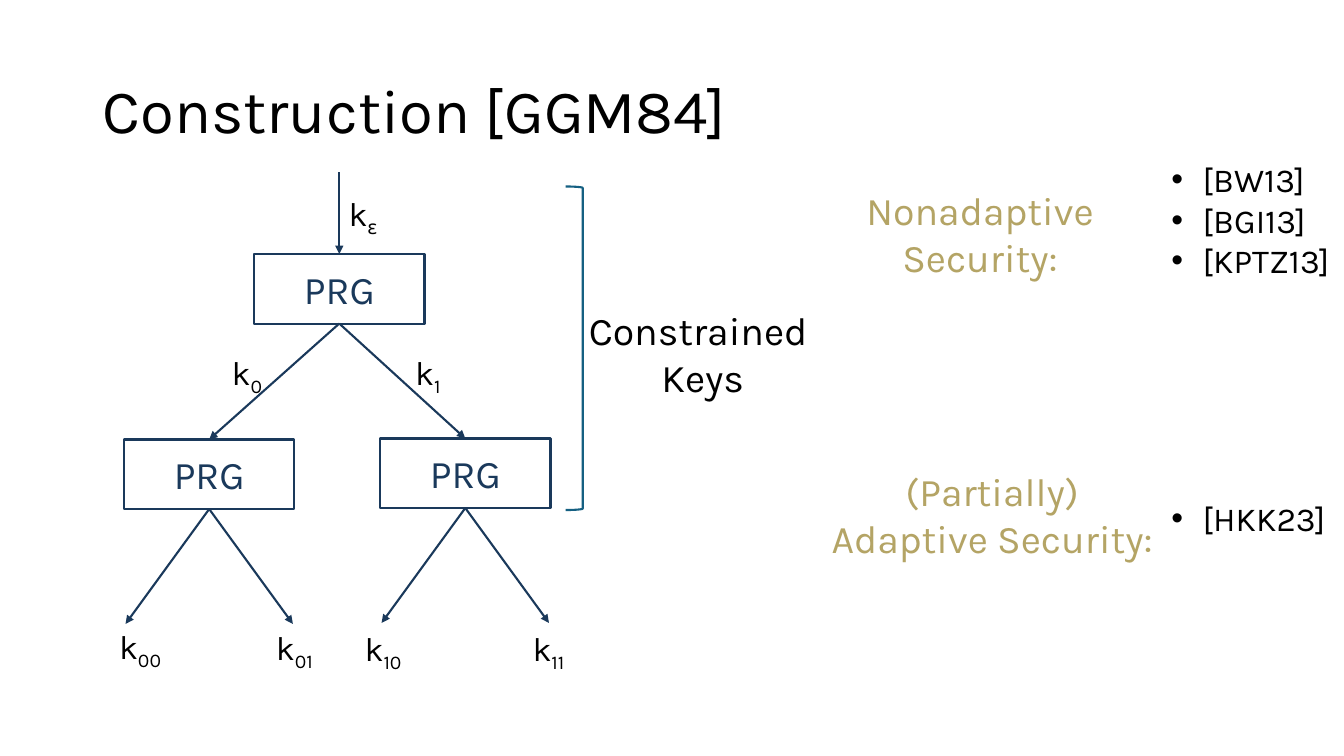
from dataclasses import dataclass
from typing import Optional

from lxml import etree
from pptx import Presentation
from pptx.dml.color import RGBColor
from pptx.enum import shapes, text
from pptx.oxml import ns
from pptx.util import Inches, Pt

BLACK = RGBColor(0x00, 0x00, 0x00)
NAVY = RGBColor(0x1A, 0x39, 0x5B)
TEAL = RGBColor(0x15, 0x60, 0x82)
GOLD = RGBColor(0xB4, 0xA4, 0x65)
FONT = "Karla"
CELL = 0.1  # inches per grid column and row
LEFT, CENTER = text.PP_ALIGN.LEFT, text.PP_ALIGN.CENTER


@dataclass(frozen=True)
class Label:
    """Text lines in a box; an underscore starts a subscript."""
    lines: tuple[str, ...]
    column: float
    row: float
    columns: float
    rows: float
    size: int = 24
    color: RGBColor = BLACK
    align: text.PP_ALIGN = CENTER
    anchor: text.MSO_ANCHOR = text.MSO_ANCHOR.TOP
    bullet: bool = False
    spacing: Optional[float] = None


@dataclass(frozen=True)
class Node:
    column: float
    row: float
    parent: Optional[int] = None
    columns: float = 16.9
    rows: float = 6.9

    @property
    def middle(self) -> float:
        return self.column + self.columns / 2

    @property
    def bottom(self) -> float:
        return self.row + self.rows


def grid(cells: float) -> int:
    return Inches(cells * CELL)


def key(name: str, column: float, row: float, align: text.PP_ALIGN = LEFT) -> Label:
    return Label((f"k_{name}",), column, row, 10.6, 5, align=align)


# Tree of generators; each parent is an index into this tuple
NODES = (Node(25.2, 25.2), Node(12.3, 43.6, 0), Node(37.7, 43.5, 0))
LEAF_REACH, LEAF_DROP = 8.3, 11.4

KEYS = (
    key("ε", 33.6, 18.6), key("0", 22, 34.4), key("1", 40.2, 34.4),
    key("00", 8.6, 61.6, CENTER), key("01", 23.9, 61.7, CENTER),
    key("10", 32.7, 61.8, CENTER), key("11", 49.1, 61.8, CENTER),
)

LABELS = (
    Label(("Construction [GGM84]",), 9.2, 4, 115, 14.5, 44, align=LEFT,
          anchor=text.MSO_ANCHOR.MIDDLE, spacing=0.9),
    Label(("Constrained ", "Keys"), 53.8, 29.9, 31.8, 10.4, 28),
    Label(("Nonadaptive Security:",), 77.8, 18, 38.8, 10.4, 28, GOLD),
    Label(("[BW13]", "[BGI13]", "[KPTZ13]"), 115.2, 15.3, 23, 13.1,
          align=LEFT, bullet=True),
    Label(("(Partially)", "Adaptive Security:"), 80.2, 45.9, 36.4, 10.4, 28, GOLD),
    Label(("[HKK23]",), 115.2, 48.9, 23, 5, align=LEFT, bullet=True),
)


def add_span(para, words: str, size: int, color: RGBColor, subscript: bool = False) -> None:
    span = para.add_run()
    span.text = words
    for name, value in {"name": FONT, "size": Pt(size)}.items():
        setattr(span.font, name, value)
    span.font.color.rgb = color
    if subscript:
        span._r.get_or_add_rPr().set("baseline", "-25000")


def add_bullet(para) -> None:
    properties = para._p.get_or_add_pPr()
    properties.set("marL", str(Inches(0.31)))
    properties.set("indent", str(Inches(-0.31)))
    etree.SubElement(properties, ns.qn("a:buFont")).set("typeface", "Arial")
    etree.SubElement(properties, ns.qn("a:buChar")).set("char", "•")


def add_label(page, label: Label) -> None:
    box = page.shapes.add_textbox(*map(grid, (label.column, label.row,
                                              label.columns, label.rows)))
    frame = box.text_frame
    for name, value in {"word_wrap": True, "vertical_anchor": label.anchor}.items():
        setattr(frame, name, value)
    for index, line in enumerate(label.lines):
        para = frame.add_paragraph() if index else frame.paragraphs[0]
        for name, value in {"alignment": label.align,
                            "line_spacing": label.spacing}.items():
            setattr(para, name, value)
        if label.bullet:
            add_bullet(para)
        base, _, subscript = line.partition("_")
        add_span(para, base, label.size, label.color)
        if subscript:
            add_span(para, subscript, label.size, label.color, True)


def add_outline(page, kind: shapes.MSO_SHAPE, column: float, row: float,
                columns: float, rows: float, color: RGBColor):
    shape = page.shapes.add_shape(kind, *map(grid, (column, row, columns, rows)))
    shape.shadow.inherit = False
    shape.fill.background()
    shape.line.color.rgb = color
    shape.line.width = Pt(1.5)
    return shape


def add_node(page, node: Node):
    box = add_outline(page, shapes.MSO_SHAPE.RECTANGLE, node.column, node.row,
                      node.columns, node.rows, NAVY)
    box.text_frame.vertical_anchor = text.MSO_ANCHOR.MIDDLE
    para = box.text_frame.paragraphs[0]
    para.alignment = CENTER
    add_span(para, "PRG", 28, NAVY)
    return box


def add_arrow(page, start: tuple[float, float], end: tuple[float, float],
              source=None, target=None) -> None:
    arrow = page.shapes.add_connector(shapes.MSO_CONNECTOR.STRAIGHT,
                                      *map(grid, start + end))
    arrow.line.color.rgb = NAVY
    arrow.line.width = Pt(1.5)
    line = arrow.line._get_or_add_ln()
    etree.SubElement(line, ns.qn("a:tailEnd")).set("type", "triangle")
    etree.SubElement(arrow._element.spPr, ns.qn("a:effectLst"))
    if source is not None:
        arrow.begin_connect(source, 2)
    if target is not None:
        arrow.end_connect(target, 0)


def main() -> None:
    deck = Presentation()
    deck.slide_width, deck.slide_height = Inches(13.33), Inches(7.5)
    page = deck.slides.add_slide(deck.slide_layouts[6])

    # Generator boxes and the arrows into them
    boxes = [add_node(page, node) for node in NODES]
    for node, box in zip(NODES, boxes):
        top = (node.middle, node.row)
        if node.parent is None:
            add_arrow(page, (node.middle, node.row - 8.1), top, target=box)
            continue
        parent = NODES[node.parent]
        add_arrow(page, (parent.middle, parent.bottom), top, boxes[node.parent], box)
        # Arrows out to the leaf keys
        for side in (-1, 1):
            add_arrow(page, (node.middle, node.bottom),
                      (node.middle + side * LEAF_REACH, node.bottom + LEAF_DROP), box)

    # Bracket around the constrained keys
    add_outline(page, shapes.MSO_SHAPE.RIGHT_BRACKET, 56.1, 18.5, 1.7, 32.1, TEAL)

    # Title, key names and security notes
    for label in LABELS + KEYS:
        add_label(page, label)

    deck.save("out.pptx")


if __name__ == "__main__":
    main()
